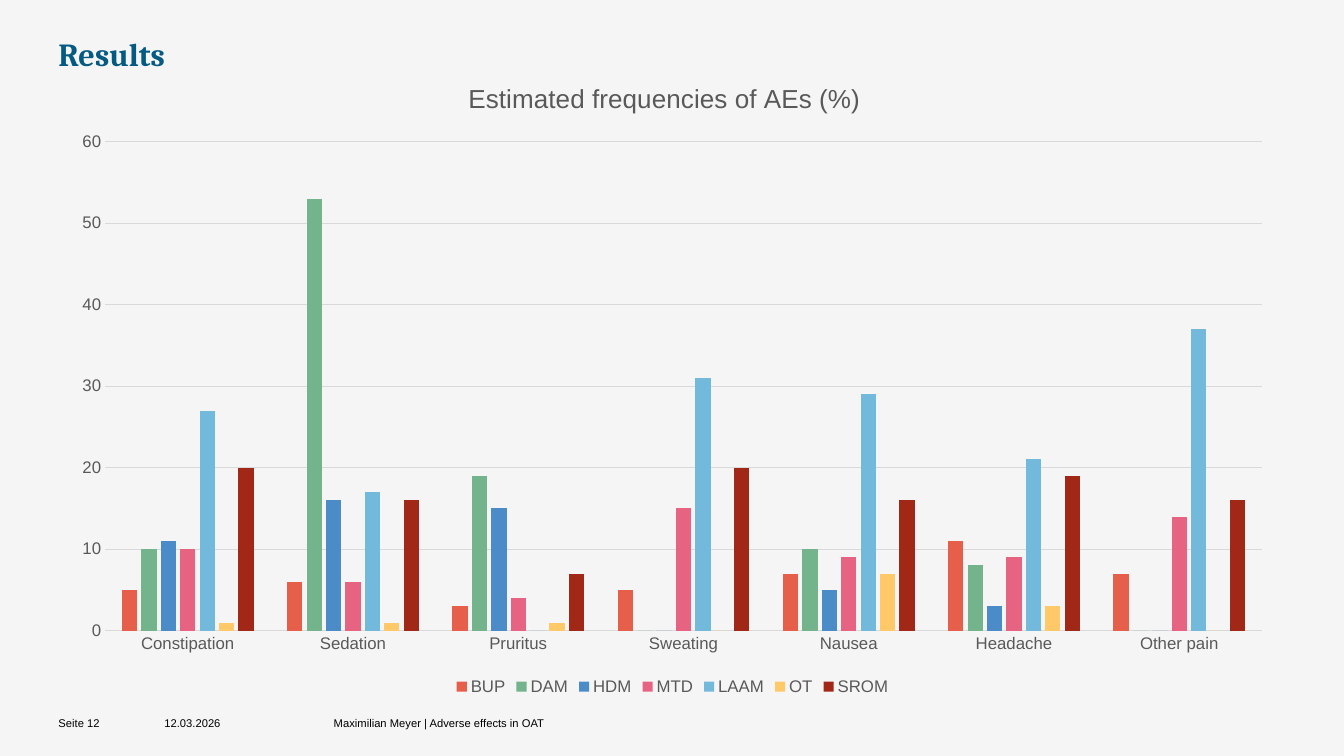
from dataclasses import dataclass
from typing import Any

from lxml import etree
from pptx import Presentation
from pptx.chart.chart import Chart
from pptx.chart.data import CategoryChartData
from pptx.dml.color import RGBColor
from pptx.enum.chart import XL_CHART_TYPE, XL_LEGEND_POSITION, XL_TICK_MARK
from pptx.enum.text import MSO_ANCHOR
from pptx.oxml.ns import qn
from pptx.slide import Slide
from pptx.util import Inches, Pt

CLUSTERED = XL_CHART_TYPE.COLUMN_CLUSTERED
LEGEND_BOTTOM = XL_LEGEND_POSITION.BOTTOM
NO_TICKS = XL_TICK_MARK.NONE
TOP, MIDDLE = MSO_ANCHOR.TOP, MSO_ANCHOR.MIDDLE


@dataclass(frozen=True)
class Theme:
    """Colours, fonts and type sizes of the slide."""
    background: str = "F5F5F5"
    heading: str = "055A82"
    footer: str = "000000"
    chart_text: str = "595959"
    grid: str = "D9D9D9"
    heading_font: str = "Cambria"
    body_font: str = "Arial"
    heading_size: float = 23
    footer_size: float = 8
    chart_title_size: float = 18.6
    chart_size: float = 12
    grid_width: float = 0.75


@dataclass(frozen=True)
class Label:
    """A line of text with its place and look."""
    text: str
    left: float
    top: float
    width: float
    height: float
    font: dict[str, Any]
    color: str
    anchor: Any = MIDDLE


@dataclass(frozen=True)
class Treatment:
    """A treatment with its frequency per adverse effect."""
    name: str
    color: str
    frequencies: tuple[int, ...]


THEME = Theme()
HEADING_FONT = {"name": THEME.heading_font, "size": Pt(THEME.heading_size), "bold": True}
FOOTER_FONT = {"name": THEME.body_font, "size": Pt(THEME.footer_size), "bold": False}
CHART_FONT = {"name": THEME.body_font, "size": Pt(THEME.chart_size), "bold": False}
CHART_TITLE_FONT = CHART_FONT | {"size": Pt(THEME.chart_title_size)}

FOOTER_TOP, FOOTER_HEIGHT = 7.02, 0.31
HEADING = Label("Results", 0.58, 0.34, 12.18, 0.98, HEADING_FONT, THEME.heading, TOP)
FOOTERS = [
    Label(text, left, FOOTER_TOP, width, FOOTER_HEIGHT, FOOTER_FONT, THEME.footer)
    for text, left, width in (
        ("Seite 12", 0.58, 0.84),
        ("12.03.2026", 1.63, 1.57),
        ("Maximilian Meyer | Adverse effects in OAT", 3.31, 4.12),
    )
]

EFFECTS = ("Constipation", "Sedation", "Pruritus", "Sweating", "Nausea", "Headache", "Other pain")
TREATMENTS = (
    Treatment("BUP", "E65F4B", (5, 6, 3, 5, 7, 11, 7)),
    Treatment("DAM", "73B48C", (10, 53, 19, 0, 10, 8, 0)),
    Treatment("HDM", "4B8CC8", (11, 16, 15, 0, 5, 3, 0)),
    Treatment("MTD", "E66482", (10, 6, 4, 15, 9, 9, 14)),
    Treatment("LAAM", "73B9DC", (27, 17, 0, 31, 29, 21, 37)),
    Treatment("OT", "FFC869", (1, 1, 1, 0, 7, 3, 0)),
    Treatment("SROM", "A12816", (20, 16, 7, 20, 16, 19, 16)),
)


def apply(target: Any, values: dict[str, Any]) -> None:
    """Set each named attribute on the target."""
    for name, value in values.items():
        setattr(target, name, value)


def style_font(font: Any, values: dict[str, Any], color: str) -> None:
    """Give a font its format values and colour."""
    apply(font, values)
    font.color.rgb = RGBColor.from_string(color)


def style_line(line: Any) -> None:
    """Draw a line in the grid colour and width."""
    line.color.rgb = RGBColor.from_string(THEME.grid)
    line.width = Pt(THEME.grid_width)


def add_label(slide: Slide, label: Label) -> None:
    """Add a text box without margins."""
    box = slide.shapes.add_textbox(
        Inches(label.left), Inches(label.top), Inches(label.width), Inches(label.height))
    frame = box.text_frame
    apply(frame, {"word_wrap": True, "vertical_anchor": label.anchor, "margin_left": 0,
                  "margin_top": 0, "margin_right": 0, "margin_bottom": 0})
    run = frame.paragraphs[0].add_run()
    run.text = label.text
    style_font(run.font, label.font, label.color)


def set_layout(parent: Any, index: int, values: dict[str, Any]) -> None:
    """Place a chart part by fractions of the chart area."""
    layout = parent.find(qn("c:layout"))
    if layout is None:
        layout = etree.Element(qn("c:layout"))
        parent.insert(index, layout)
    manual = etree.SubElement(layout, qn("c:manualLayout"))
    for name, value in values.items():
        etree.SubElement(manual, qn(f"c:{name}")).set("val", str(value))


def style_axes(chart: Chart) -> None:
    """Set the scale, lines and labels of both axes."""
    for axis in (chart.category_axis, chart.value_axis):
        apply(axis, {"major_tick_mark": NO_TICKS, "minor_tick_mark": NO_TICKS})
        style_font(axis.tick_labels.font, CHART_FONT, THEME.chart_text)
    style_line(chart.category_axis.format.line)
    frequency_axis = chart.value_axis
    apply(frequency_axis, {"minimum_scale": 0, "maximum_scale": 60, "major_unit": 10,
                           "has_major_gridlines": True})
    frequency_axis.format.line.fill.background()
    style_line(frequency_axis.major_gridlines.format.line)


def add_frequency_chart(slide: Slide) -> None:
    """Add the clustered columns of adverse effect frequencies."""
    frequencies = CategoryChartData()
    frequencies.categories = EFFECTS
    for treatment in TREATMENTS:
        frequencies.add_series(treatment.name, treatment.frequencies)
    chart = slide.shapes.add_chart(
        CLUSTERED, Inches(0.58), Inches(0.57), Inches(12.18), Inches(6.37), frequencies).chart
    style_font(chart.font, CHART_FONT, THEME.chart_text)

    apply(chart, {"has_title": True, "has_legend": True})
    caption = chart.chart_title.text_frame.paragraphs[0].add_run()
    caption.text = "Estimated frequencies of AEs (%)"
    style_font(caption.font, CHART_TITLE_FONT, THEME.chart_text)
    apply(chart.legend, {"position": LEGEND_BOTTOM, "include_in_layout": False})
    style_font(chart.legend.font, CHART_FONT, THEME.chart_text)

    columns = chart.plots[0]
    apply(columns, {"gap_width": 219, "overlap": -27, "vary_by_categories": False})
    for series, treatment in zip(columns.series, TREATMENTS):
        series.invert_if_negative = False
        series.format.fill.solid()
        series.format.fill.fore_color.rgb = RGBColor.from_string(treatment.color)
    style_axes(chart)

    title = chart.chart_title._element
    set_layout(title, 1, {"xMode": "edge", "yMode": "edge", "x": 0.33, "y": 0.03})
    set_layout(title.getparent().find(qn("c:plotArea")), 0, {
        "layoutTarget": "inner", "xMode": "edge", "yMode": "edge",
        "x": 0.038, "y": 0.131, "w": 0.942, "h": 0.762})


def main() -> None:
    """Build and save the results slide."""
    deck = Presentation()
    apply(deck, {"slide_width": Inches(13.33), "slide_height": Inches(7.5)})
    slide = deck.slides.add_slide(deck.slide_layouts[6])
    slide.background.fill.solid()
    slide.background.fill.fore_color.rgb = RGBColor.from_string(THEME.background)
    add_frequency_chart(slide)
    for label in (HEADING, *FOOTERS):
        add_label(slide, label)
    deck.save("out.pptx")


if __name__ == "__main__":
    main()
